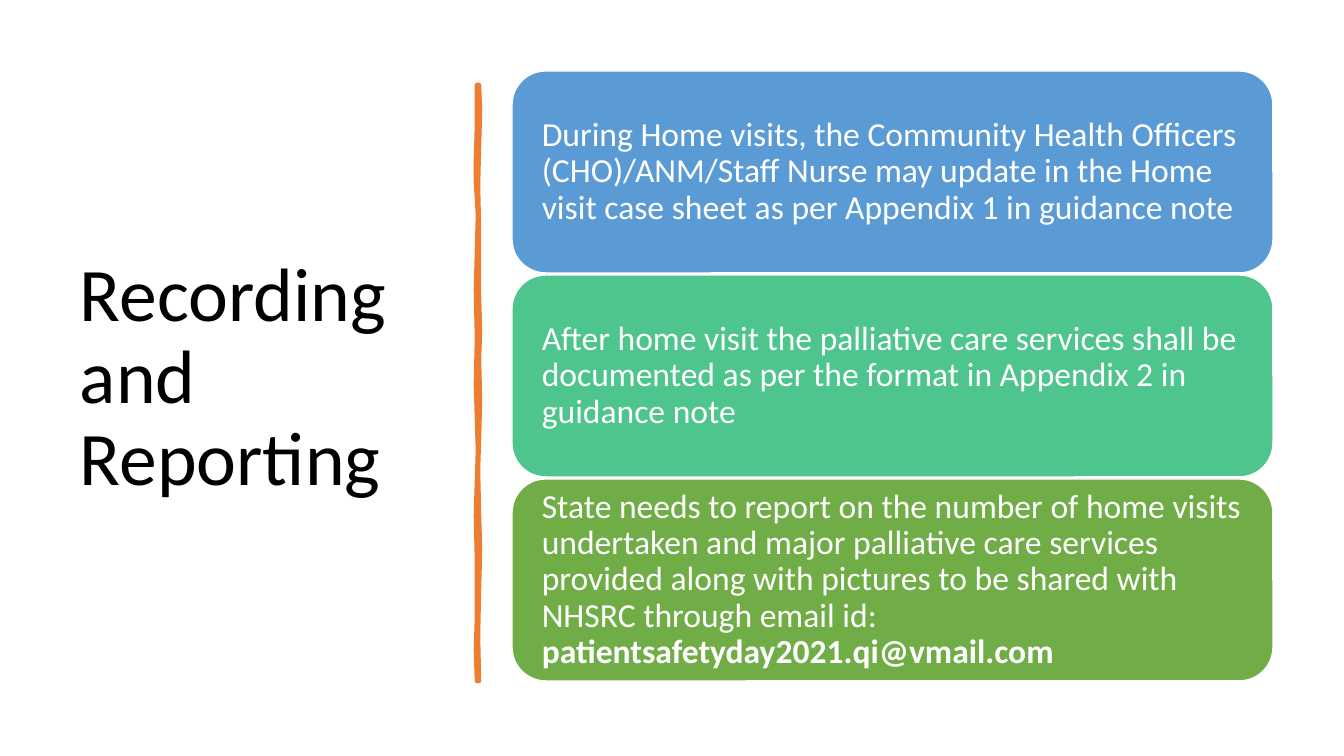
"""Build the Recording and Reporting slide: title, wavy divider and three cards."""
from pptx import Presentation
from pptx.dml.color import RGBColor
from pptx.enum.shapes import MSO_SHAPE
from pptx.enum.text import MSO_ANCHOR, PP_ALIGN
from pptx.util import Pt

BLACK = RGBColor(0x00, 0x00, 0x00)
WHITE = RGBColor(0xFF, 0xFF, 0xFF)
ORANGE = RGBColor(0xED, 0x7D, 0x31)
BLUE = RGBColor(0x5B, 0x9B, 0xD5)
TEAL = RGBColor(0x4D, 0xC5, 0x8D)
GREEN = RGBColor(0x70, 0xAD, 0x47)

TITLE = "Recording and Reporting"
CARDS = [
    (BLUE, "During Home visits, the Community Health Officers (CHO)/ANM/Staff Nurse "
           "may update in the Home visit case sheet as per Appendix 1 in guidance note", ""),
    (TEAL, "After home visit the palliative care services shall be documented "
           "as per the format in Appendix 2 in guidance note", ""),
    (GREEN, "State needs to report on the number of home visits undertaken and major "
            "palliative care services provided along with pictures to be shared with "
            "NHSRC through email id: ", "patientsafetyday2021.qi@vmail.com"),
]

PX = 914400 / 100.8
SLIDE_SIZE = (1344, 756)
TITLE_BOX = (70, 71, 377, 616)
CARD_LEFT, CARD_TOP, CARD_WIDTH, CARD_HEIGHT, CARD_GAP = 512, 71, 761, 202, 2
CARD_INSET = 20
DIVIDER_RIGHT = [(479, 85), (480, 110), (479, 147), (478, 185), (479, 228), (479, 296),
                 (480, 330), (479, 359), (480, 400), (479, 439), (478, 470), (479, 514),
                 (480, 550), (479, 589), (478, 635), (479, 681)]
DIVIDER_LEFT = [(477, 681), (476, 650), (477, 618), (477, 561), (476, 515), (477, 481),
                (478, 450), (477, 418), (476, 385), (477, 338), (476, 290), (477, 252),
                (478, 215), (476, 182), (476, 160), (477, 125), (477, 85)]


def emu(*lengths):
    return [round(length * PX) for length in lengths]


def write(frame, runs, size, color):
    frame.word_wrap = True
    frame.vertical_anchor = MSO_ANCHOR.MIDDLE
    paragraph = frame.paragraphs[0]
    paragraph.alignment = PP_ALIGN.LEFT
    paragraph.line_spacing = 0.9
    paragraph.font.name = "Calibri"
    paragraph.font.size = Pt(size)
    paragraph.font.color.rgb = color
    for text, bold in runs:
        run = paragraph.add_run()
        run.text = text
        if bold:
            run.font.bold = True


def paint(shape, fill, line, width):
    shape.shadow.inherit = False
    shape.fill.solid()
    shape.fill.fore_color.rgb = fill
    shape.line.color.rgb = line
    shape.line.width = Pt(width)


def add_divider(slide):
    start, *others = DIVIDER_RIGHT + DIVIDER_LEFT
    builder = slide.shapes.build_freeform(*start, scale=PX)
    builder.add_line_segments(others, close=True)
    paint(builder.convert_to_shape(), ORANGE, ORANGE, 3.25)


def add_card(slide, index, color, text, address):
    top = CARD_TOP + index * (CARD_HEIGHT + CARD_GAP)
    card = slide.shapes.add_shape(MSO_SHAPE.ROUNDED_RECTANGLE,
                                  *emu(CARD_LEFT, top, CARD_WIDTH, CARD_HEIGHT))
    paint(card, color, WHITE, 1)
    frame = card.text_frame
    frame.margin_left, frame.margin_right = emu(CARD_INSET, CARD_INSET)
    frame.margin_top = frame.margin_bottom = 0
    runs = [(text, False)] + ([(address, True)] if address else [])
    write(frame, runs, 24, WHITE)


def main():
    deck = Presentation()
    deck.slide_width, deck.slide_height = emu(*SLIDE_SIZE)
    slide = deck.slides.add_slide(deck.slide_layouts[6])
    title = slide.shapes.add_textbox(*emu(*TITLE_BOX))
    write(title.text_frame, [(TITLE, False)], 54, BLACK)
    add_divider(slide)
    for index, card in enumerate(CARDS):
        add_card(slide, index, *card)
    deck.save("out.pptx")


if __name__ == "__main__":
    main()
